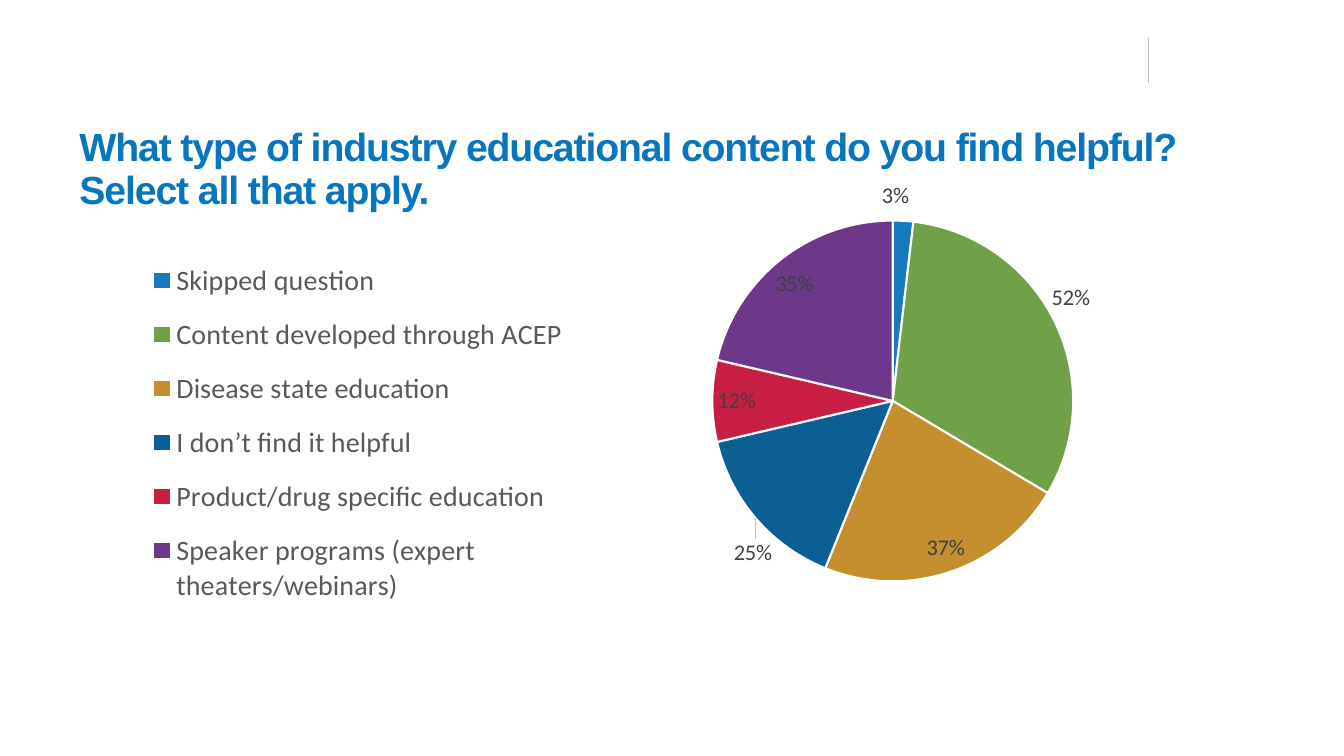
from dataclasses import dataclass

from lxml.etree import SubElement
from pptx import Presentation
from pptx.chart.data import CategoryChartData as ChartData
from pptx.dml.color import RGBColor as Rgb
from pptx.enum.chart import XL_CHART_TYPE as ChartType
from pptx.enum.chart import XL_LABEL_POSITION as LabelPosition
from pptx.enum.chart import XL_LEGEND_POSITION as LegendPosition
from pptx.enum.shapes import MSO_CONNECTOR as Connector
from pptx.enum.text import MSO_ANCHOR as Anchor
from pptx.oxml import parse_xml
from pptx.oxml.ns import nsdecls, qn
from pptx.util import Inches, Pt

CELL = Inches(0.1)
COLUMNS, ROWS = 133.33, 75

COLORS = {
    "title": "0776BD", "rule": "BFBFBF", "legend": "595959", "label": "404040",
    "edge": "FFFFFF", "blue": "157BBE", "green": "70A149", "gold": "C58E2F",
    "navy": "0C5F95", "red": "C91E43", "purple": "6D3889",
}


@dataclass(frozen=True)
class Area:
    """A block of grid cells."""
    column: float
    row: float
    columns: float
    rows: float

    def lengths(self) -> list[int]:
        return [round(n * CELL) for n in (self.column, self.row, self.columns, self.rows)]

    def shares_of(self, outer: "Area") -> dict[str, float]:
        return {
            "x": (self.column - outer.column) / outer.columns,
            "y": (self.row - outer.row) / outer.rows,
            "w": self.columns / outer.columns,
            "h": self.rows / outer.rows,
        }


@dataclass(frozen=True)
class Answer:
    """One answer, its share and the nudge of its label in grid cells."""
    wording: str
    share: float
    color: str
    nudge: tuple[float, float] | None = None


QUESTION = ("What type of industry educational content do you find helpful? "
            "Select all that apply.")
ANSWERS = [
    Answer("Skipped question", 0.03, "blue", (-0.8, -0.5)),
    Answer("Content developed through ACEP", 0.52, "green", (-0.8, -0.7)),
    Answer("Disease state education", 0.37, "gold"),
    Answer("I don’t find it helpful", 0.25, "navy", (2, 1.7)),
    Answer("Product/drug specific education", 0.12, "red"),
    Answer("Speaker programs (expert theaters/webinars)", 0.35, "purple"),
]
QUESTION_AREA = Area(6.9, 9.7, 115.2, 14.4)
CHART_AREA = Area(8.2, 9.3, 114, 56.4)
PIE_AREA = Area(70.7, 21.9, 35.8, 35.8)
LEGEND_AREA = Area(14, 24.2, 43, 37.5)


def set_font(font, color: str, **values) -> None:
    for name, value in values.items():
        setattr(font, name, value)
    font.color.rgb = Rgb.from_string(COLORS[color])


def manual_layout(shares: dict[str, float], modes: dict[str, str]):
    layout = parse_xml(f"<c:layout {nsdecls('c')}><c:manualLayout/></c:layout>")
    for tag, value in {**modes, **shares}.items():
        SubElement(layout[0], qn(f"c:{tag}")).set(
            "val", value if isinstance(value, str) else f"{value:.3f}")
    return layout


def draw_rule(slide) -> None:
    column, top, bottom = 113.9 * CELL, 3.8 * CELL, 8.2 * CELL
    rule = slide.shapes.add_connector(
        Connector.STRAIGHT, *map(round, (column, top, column, bottom)))
    rule.line.width = Pt(0.5)
    rule.line.color.rgb = Rgb.from_string(COLORS["rule"])
    SubElement(rule._element.spPr, qn("a:effectLst"))


def draw_question(slide) -> None:
    frame = slide.shapes.add_textbox(*QUESTION_AREA.lengths()).text_frame
    for name, value in {"word_wrap": True, "vertical_anchor": Anchor.MIDDLE}.items():
        setattr(frame, name, value)
    paragraph = frame.paragraphs[0]
    paragraph.line_spacing = 0.9
    question = paragraph.add_run()
    question.text = QUESTION
    set_font(question.font, "title", name="Arial", size=Pt(28), bold=True)
    question._r.get_or_add_rPr().set("spc", "-80")


def style_legend(chart) -> None:
    chart.has_legend = True
    legend = chart.legend
    legend.position = LegendPosition.BOTTOM
    legend.include_in_layout = False
    set_font(legend.font, "legend", name="Calibri", size=Pt(20))
    for old in legend._element.findall(qn("c:layout")):
        legend._element.remove(old)
    legend._element.find(qn("c:legendPos")).addnext(manual_layout(
        LEGEND_AREA.shares_of(CHART_AREA), {"xMode": "edge", "yMode": "edge"}))


def style_slices(series) -> None:
    labels = series.data_labels
    for name, value in {"show_value": True, "number_format": "0%",
                        "number_format_is_linked": False,
                        "position": LabelPosition.BEST_FIT}.items():
        setattr(labels, name, value)
    set_font(labels.font, "label", name="Calibri", size=Pt(16))
    for index, answer in enumerate(ANSWERS):
        point = series.points[index]
        point.format.fill.solid()
        point.format.fill.fore_color.rgb = Rgb.from_string(COLORS[answer.color])
        point.format.line.width = Pt(1.5)
        point.format.line.color.rgb = Rgb.from_string(COLORS["edge"])
        if answer.nudge:
            label = point.data_label
            label.position = LabelPosition.BEST_FIT
            set_font(label.font, "label", name="Calibri", size=Pt(16))
            across, down = answer.nudge
            nudge = {"x": across / CHART_AREA.columns, "y": down / CHART_AREA.rows}
            entry = labels._element.find(f"{qn('c:dLbl')}[{qn('c:idx')}][last()]")
            entry.find(qn("c:idx")).addnext(manual_layout(nudge, {}))
    labels._element.append(parse_xml(
        f"<c:leaderLines {nsdecls('c', 'a')}><c:spPr><a:ln w='6350'><a:solidFill>"
        f"<a:srgbClr val='{COLORS['rule']}'/></a:solidFill></a:ln></c:spPr></c:leaderLines>"))


def draw_chart(slide) -> None:
    data = ChartData(number_format="0%")
    data.categories = [answer.wording for answer in ANSWERS]
    data.add_series("Series 1", [answer.share for answer in ANSWERS])
    chart = slide.shapes.add_chart(ChartType.PIE, *CHART_AREA.lengths(), data).chart
    chart.has_title = False
    chart.font.name, chart.font.size = "Calibri", Pt(16)
    plot = chart.plots[0]
    plot.vary_by_categories = True
    plot_area = chart._chartSpace.chart.plotArea
    for old in plot_area.findall(qn("c:layout")):
        plot_area.remove(old)
    plot_area.insert(0, manual_layout(
        PIE_AREA.shares_of(CHART_AREA),
        {"layoutTarget": "inner", "xMode": "edge", "yMode": "edge"}))
    style_legend(chart)
    style_slices(plot.series[0])


def main() -> None:
    deck = Presentation()
    deck.slide_width, deck.slide_height = round(COLUMNS * CELL), ROWS * CELL
    slide = deck.slides.add_slide(deck.slide_layouts[6])
    draw_rule(slide)
    draw_question(slide)
    draw_chart(slide)
    deck.save("out.pptx")


if __name__ == "__main__":
    main()
